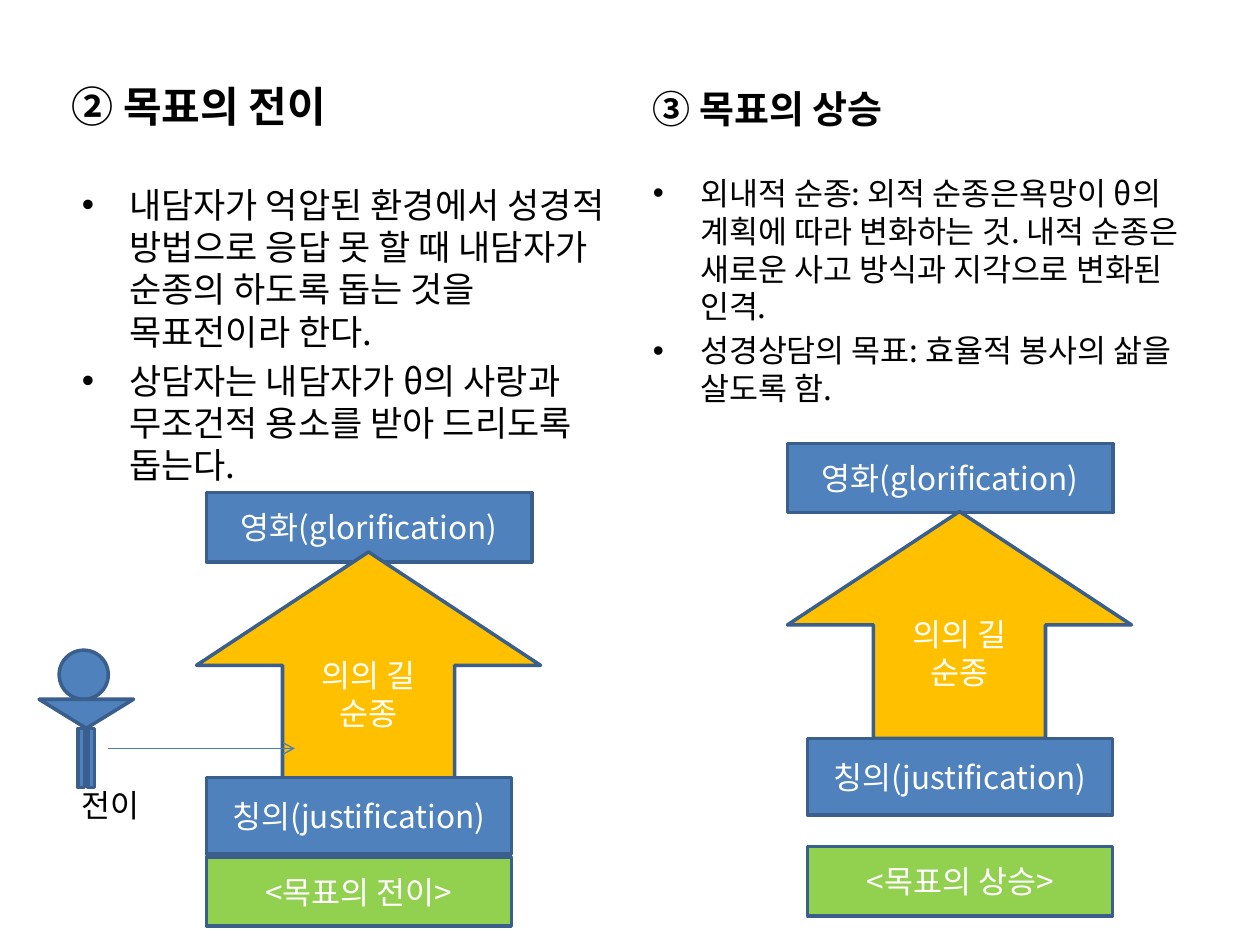
from lxml import etree
from pptx import Presentation
from pptx.dml.color import RGBColor
from pptx.enum.shapes import MSO_CONNECTOR, MSO_SHAPE
from pptx.enum.text import MSO_ANCHOR, MSO_AUTO_SIZE, PP_ALIGN
from pptx.oxml.ns import qn
from pptx.util import Pt

RECT, ARROW, OVAL = MSO_SHAPE.RECTANGLE, MSO_SHAPE.UP_ARROW, MSO_SHAPE.OVAL
MERGE, PROCESS = MSO_SHAPE.FLOWCHART_MERGE, MSO_SHAPE.FLOWCHART_PROCESS
STRAIGHT = MSO_CONNECTOR.STRAIGHT
TOP, MIDDLE, BOTTOM = MSO_ANCHOR.TOP, MSO_ANCHOR.MIDDLE, MSO_ANCHOR.BOTTOM
CENTER, NO_FIT = PP_ALIGN.CENTER, MSO_AUTO_SIZE.NONE

BLACK = RGBColor(0x00, 0x00, 0x00)
WHITE = RGBColor(0xFF, 0xFF, 0xFF)
BLUE = RGBColor(0x4F, 0x81, 0xBD)
OUTLINE = RGBColor(0x3A, 0x5F, 0x8C)
LINK = RGBColor(0x4B, 0x7E, 0xBC)
GOLD = RGBColor(0xFF, 0xC0, 0x00)
GREEN = RGBColor(0x92, 0xD0, 0x50)


class Deck:
    font = "Noto Sans CJK KR"
    line_height = 1.2

    def __init__(self, s):
        self.s = s

    def style(self, p, size, color, bold=False):
        """Format a paragraph, for Latin and Korean letters alike."""
        p.line_spacing = Pt(size * self.line_height)
        f = p.font
        f.name, f.size, f.bold = self.font, Pt(size), bold
        f.color.rgb = color
        for r in p.runs:
            r.font.name = self.font
            latin = r.font._element.find(qn("a:latin"))
            ea = etree.Element(qn("a:ea"), typeface=self.font)
            latin.addnext(ea)

    def fill_text(self, tf, lines, size, color, bold=False):
        tf.text = "\n".join(lines)
        for p in tf.paragraphs:
            self.style(p, size, color, bold)

    def body(self, idx, box, lines, size, anchor=TOP, bold=False):
        sp = self.s.placeholders[idx]
        sp.left, sp.top, sp.width, sp.height = map(Pt, box)
        tf = sp.text_frame
        tf.auto_size, tf.vertical_anchor = NO_FIT, anchor
        self.fill_text(tf, lines, size, BLACK, bold)
        return tf

    def caption(self, tf, text, size, gap):
        """Add a paragraph without bullet, set well below the list."""
        p = tf.add_paragraph()
        p.text = text
        self.style(p, size, BLACK)
        p.space_before = Pt(gap)
        etree.SubElement(p._p.get_or_add_pPr(), qn("a:buNone"))
        pPr = p._p.pPr
        pPr.insert_element_before(pPr.find(qn("a:buNone")), "a:defRPr")

    def shape(self, kind, box, color, lines=()):
        sp = self.s.shapes.add_shape(kind, *map(Pt, box))
        sp.shadow.inherit = False
        sp.fill.solid()
        sp.fill.fore_color.rgb = color
        sp.line.color.rgb = OUTLINE
        sp.line.width = Pt(2)
        if lines:
            tf = sp.text_frame
            tf.word_wrap, tf.vertical_anchor = True, MIDDLE
            self.fill_text(tf, lines, 18, WHITE)
            for p in tf.paragraphs:
                p.alignment = CENTER

    def arrow(self, x1, y1, x2, y2):
        c = self.s.shapes.add_connector(STRAIGHT, *map(Pt, (x1, y1, x2, y2)))
        c.line.color.rgb = LINK
        c.line.width = Pt(0.75)
        etree.SubElement(c.line._get_or_add_ln(), qn("a:tailEnd"), type="arrow")
        etree.SubElement(c._element.spPr, qn("a:effectLst"))

    def path_diagram(self, top, arrow, base, label, title):
        """Draw the way from base to top; each place is (left, top)."""
        self.shape(RECT, (*top, 186, 39.6), BLUE, ["영화(glorification)"])
        self.shape(ARROW, (*arrow, 196.6, 129.6), GOLD, ["의의 길", "순종"])
        self.shape(RECT, (*base, 174.2, 43.9), BLUE, ["칭의(justification)"])
        self.shape(RECT, (*label, 174.2, 39.6), GREEN, [title])

    def person(self):
        self.shape(OVAL, (33.8, 371.5, 28.1, 28.1), BLUE)
        self.shape(MERGE, (22.3, 399.6, 54, 16.6), BLUE)
        for x in (44.6, 50.4):
            self.shape(PROCESS, (x, 416.2, 3.6, 33.8), BLUE)


def main():
    prs = Presentation()
    prs.slide_width, prs.slide_height = Pt(720), Pt(540)
    s = prs.slides.add_slide(prs.slide_layouts.get_by_name("Comparison"))
    title = s.shapes.title._element
    title.getparent().remove(title)
    d = Deck(s)

    d.body(1, (33.8, 28.1, 318.2, 50.4), ["② 목표의 전이"], 24, BOTTOM, True)
    tf = d.body(2, (39.6, 101.5, 318.2, 405.4), [
        "내담자가 억압된 환경에서 성경적 방법으로 응답 못 할 때 내담자가 "
        "순종의 하도록 돕는 것을 목표전이라 한다.",
        "상담자는 내담자가 θ의 사랑과 무조건적 용소를 받아 드리도록 돕는다.",
    ], 20)
    d.caption(tf, "전이", 18, 172)
    d.body(3, (365.8, 28.1, 318.2, 50.4), ["③ 목표의 상승"], 21.7, BOTTOM, True)
    d.body(4, (365.8, 95.8, 318.2, 386.6), [
        "외내적 순종: 외적 순종은욕망이 θ의 계획에 따라 변화하는 것. "
        "내적 순종은 새로운 사고 방식과 지각으로 변화된 인격.",
        "성경상담의 목표: 효율적 봉사의 삶을 살도록 함.",
    ], 18)

    d.path_diagram((118, 281.5), (112.3, 315.4), (118, 444.2), (118, 489.6),
                   "<목표의 전이>")
    d.path_diagram((450, 253.4), (450, 292.3), (461.5, 421.9), (461.5, 483.8),
                   "<목표의 상승>")
    d.person()
    d.arrow(61.9, 427.7, 168.5, 427.7)
    prs.save("out.pptx")


if __name__ == "__main__":
    main()
